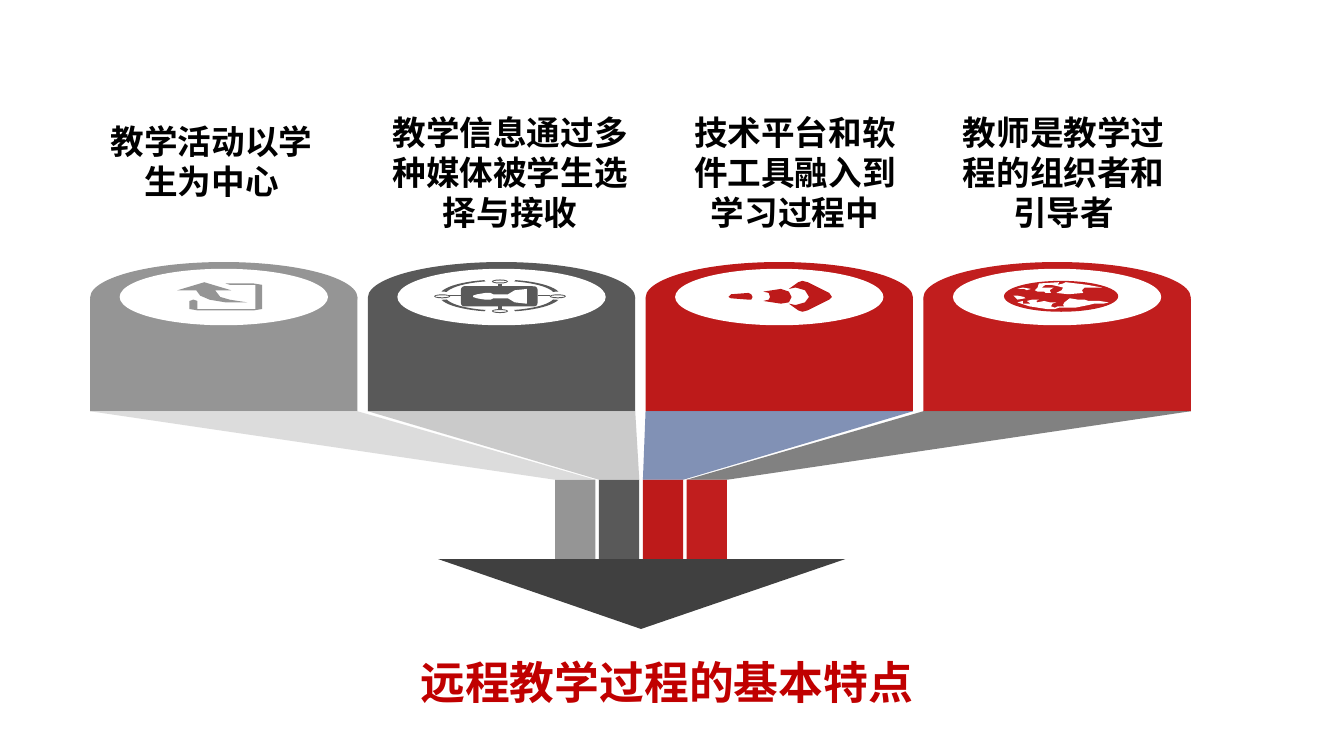
import math

import pptx
import pptx.dml.color
import pptx.enum.shapes
import pptx.enum.text
import pptx.oxml.ns
import pptx.util
from lxml import etree

Inches, Pt = pptx.util.Inches, pptx.util.Pt
RGB = pptx.dml.color.RGBColor
SHAPE = pptx.enum.shapes.MSO_SHAPE
qn = pptx.oxml.ns.qn

WHITE = RGB(0xFF, 0xFF, 0xFF)
BLACK = RGB(0, 0, 0)
LIGHT = RGB(0x95, 0x95, 0x95)
DARK = RGB(0x59, 0x59, 0x59)
RED = RGB(0xBD, 0x1A, 0x1A)
BRIGHT_RED = RGB(0xC1, 0x1E, 0x1E)
TITLE_RED = RGB(0xC0, 0, 0)
ARROW = RGB(0x40, 0x40, 0x40)
FONT = "Noto Sans CJK SC"

# Columns: cylinder colour, funnel colour, label, label box
COLUMNS = [
    (LIGHT, RGB(0xD5, 0xD5, 0xD5), "教学活动以学生为中心", (0.71, 0.85, 1.73, 0.71)),
    (DARK, RGB(0xBF, 0xBF, 0xBF), "教学信息通过多种媒体被学生选择与接收", (2.8, 0.78, 1.99, 1.01)),
    (RED, RGB(0x66, 0x79, 0xA5), "技术平台和软件工具融入到学习过程中", (5, 0.78, 1.83, 1.01)),
    (BRIGHT_RED, RGB(0x66, 0x66, 0x66), "教师是教学过程的组织者和引导者", (7.05, 0.78, 1.73, 1.01)),
]
WIDTH, STEM = 1.99, 0.3

# Icon outlines, in inches on the slide
FRAME = [(1.95, 2.12), (1.95, 2.3), (1.89, 2.31), (1.47, 2.31), (1.41, 2.3), (1.41, 2.24),
         (1.44, 2.23), (1.47, 2.24), (1.47, 2.3), (1.9, 2.3), (1.9, 2.12), (1.71, 2.12),
         (1.68, 2.11), (1.71, 2.11), (1.89, 2.11)]
SHARE = [(1.72, 2.16), (1.52, 2.1), (1.32, 2.16), (1.46, 2.16), (1.49, 2.2), (1.56, 2.23),
         (1.68, 2.25), (1.84, 2.25), (1.71, 2.23), (1.64, 2.21), (1.6, 2.16)]
PERSON_TOP = [(3.92, 2.15), (3.83, 2.16), (3.78, 2.19), (3.67, 2.19), (3.65, 2.18),
              (3.61, 2.18), (3.55, 2.19), (3.52, 2.2)]
PERSON = PERSON_TOP + [(x, 4.41 - y) for x, y in reversed(PERSON_TOP)]
BEACON = [
    [(5.94, 2.1), (5.87, 2.15), (5.92, 2.14), (5.99, 2.16), (6.02, 2.21), (5.99, 2.25),
     (5.92, 2.27), (5.87, 2.26), (5.94, 2.31), (5.97, 2.32), (6.01, 2.31), (6.17, 2.23),
     (6.19, 2.21), (6.17, 2.18), (6.01, 2.1), (5.97, 2.09)],
    [(5.6, 2.21), (5.59, 2.19), (5.57, 2.18), (5.44, 2.19), (5.42, 2.21), (5.44, 2.22),
     (5.57, 2.23), (5.59, 2.23)],
    [(5.89, 2.21), (5.87, 2.17), (5.81, 2.15), (5.68, 2.17), (5.72, 2.18), (5.73, 2.21),
     (5.72, 2.23), (5.68, 2.24), (5.81, 2.26), (5.87, 2.25)],
]
LANDS = [
    [(7.64, 2.16), (7.62, 2.15), (7.57, 2.15), (7.61, 2.14), (7.67, 2.15)],
    [(7.57, 2.2), (7.62, 2.21), (7.63, 2.22), (7.57, 2.23), (7.56, 2.22), (7.54, 2.2)],
    [(8.02, 2.23), (8.07, 2.23), (8.1, 2.24), (8.18, 2.24), (8.25, 2.25), (8.21, 2.26),
     (8.14, 2.26), (8.1, 2.27), (8.05, 2.28), (8, 2.29), (7.95, 2.29), (7.88, 2.29),
     (7.85, 2.3), (7.79, 2.3), (7.66, 2.28), (7.57, 2.25), (7.61, 2.24), (7.61, 2.26),
     (7.67, 2.26), (7.64, 2.24), (7.68, 2.23), (7.73, 2.23), (7.71, 2.24), (7.72, 2.25),
     (7.77, 2.24), (7.81, 2.25), (7.86, 2.25), (7.83, 2.26), (7.82, 2.28), (7.85, 2.29),
     (7.87, 2.28), (7.92, 2.28), (7.91, 2.27), (7.92, 2.25), (7.96, 2.22)],
    [(7.91, 2.11), (7.93, 2.1), (8.09, 2.12), (8.2, 2.14), (8.15, 2.14), (8.07, 2.14),
     (8.05, 2.16), (8.06, 2.18), (7.95, 2.19), (7.86, 2.18), (7.9, 2.16), (7.91, 2.14),
     (7.87, 2.13), (7.82, 2.12), (7.78, 2.12), (7.75, 2.14), (7.84, 2.14), (7.81, 2.16),
     (7.82, 2.18), (7.78, 2.18), (7.77, 2.17), (7.72, 2.17), (7.7, 2.16), (7.72, 2.14),
     (7.73, 2.11), (7.88, 2.1), (7.87, 2.12)],
]


def write(tf, text, size=18, color=BLACK, bold=True, align=pptx.enum.text.PP_ALIGN.CENTER):
    p = tf.paragraphs[0]
    p.alignment, p.space_after, p.line_spacing = align, Pt(6), Pt(size * 1.2)
    r = p.add_run()
    r.text = text
    r.font.size, r.font.bold, r.font.name = Pt(size), bold, FONT
    r.font.color.rgb = color
    etree.SubElement(r.font._element, qn("a:ea")).set("typeface", FONT)


class Painter:
    def __init__(self, s):
        self.s = s

    def paint(self, sp, color, alpha=None):
        sp.shadow.inherit = False
        sp.fill.solid()
        sp.fill.fore_color.rgb = color
        sp.line.fill.background()
        if alpha:
            clr = sp._element.spPr.find(".//" + qn("a:srgbClr"))
            etree.SubElement(clr, qn("a:alpha")).set("val", str(alpha * 1000))

    def shape(self, kind, x, y, w, h, color):
        sp = self.s.shapes.add_shape(kind, Inches(x), Inches(y), Inches(w), Inches(h))
        self.paint(sp, color)

    def outline(self, contours, color, alpha=None):
        paths = [[(Inches(x), Inches(y)) for x, y in c] for c in contours]
        fb = self.s.shapes.build_freeform(*paths[0][0])
        fb.add_line_segments(paths[0][1:], close=True)
        for path in paths[1:]:
            fb.move_to(*path[0])
            fb.add_line_segments(path[1:], close=True)
        self.paint(fb.convert_to_shape(), color, alpha)

    def line(self, x1, y1, x2, y2, color, width):
        c = self.s.shapes.add_connector(pptx.enum.shapes.MSO_CONNECTOR.STRAIGHT,
                                        Inches(x1), Inches(y1), Inches(x2), Inches(y2))
        c.line.color.rgb, c.line.width = color, Pt(width)
        etree.SubElement(c._element.spPr, qn("a:effectLst"))

    def text(self, box, text, **fmt):
        tf = self.s.shapes.add_textbox(*map(Inches, box)).text_frame
        tf.word_wrap = True
        tf.auto_size = pptx.enum.text.MSO_AUTO_SIZE.SHAPE_TO_FIT_TEXT
        write(tf, text, **fmt)


def ring_part(start):
    """A 60 degree piece of the flat ring around the network icon."""
    angles = [math.radians(start + a) for a in range(0, 61, 6)]
    outer = [(3.72 + 0.45 * math.cos(a), 2.2 + 0.12 * math.sin(a)) for a in angles]
    inner = [(3.72 + 0.41 * math.cos(a), 2.2 + 0.11 * math.sin(a)) for a in angles]
    return outer + inner[::-1]


def main():
    prs = pptx.Presentation()
    prs.slide_width = Inches(10)
    prs.slide_height = prs.slide_width * 9 // 16
    d = Painter(prs.slides.add_slide(prs.slide_layouts[6]))

    # Cylinders, funnels and stems
    for i, (color, funnel, label, box) in enumerate(COLUMNS):
        x, stem = 0.67 + 6.2 / 3 * i, 4.13 + 0.98 / 3 * i
        d.shape(SHAPE.RECTANGLE, x, 2.22, WIDTH, 0.84, color)
        d.shape(SHAPE.RECTANGLE, stem, 3.57, STEM, 0.64, color)
        d.outline([[(x, 3.06), (x + WIDTH, 3.06), (stem + STEM, 3.57), (stem, 3.57)]], funnel, 82)
        d.shape(SHAPE.OVAL, x, 1.95, WIDTH, 0.53, color)
        d.shape(SHAPE.OVAL, x + 0.22, 2, 1.55, 0.42, WHITE)

    # Arrow
    d.outline([[(3.26, 4.16), (6.29, 4.16), (4.77, 4.68)]], ARROW)

    # Share icon
    d.outline([FRAME], LIGHT)
    d.outline([SHARE], LIGHT)

    # Network icon
    d.outline([ring_part(a) for a in (15, 105, 195, 285)], DARK)
    d.shape(SHAPE.ROUNDED_RECTANGLE, 3.43, 2.13, 0.57, 0.15, DARK)
    d.outline([PERSON], WHITE)
    for x, y in [(3.66, 2.08), (3.66, 2.3), (3.23, 2.19), (4.09, 2.19)]:
        d.shape(SHAPE.DONUT, x, y, 0.12, 0.03, DARK)
    for x in (3.34, 4):
        d.line(x, 2.2, x + 0.09, 2.2, DARK, 0.75)
    for y in (2.11, 2.28):
        d.line(3.72, y, 3.72, y + 0.02, DARK, 2)

    # Beacon and globe icons
    d.outline(BEACON, RED)
    d.shape(SHAPE.OVAL, 7.47, 2.09, 0.85, 0.23, BRIGHT_RED)
    d.outline(LANDS, WHITE)

    # Labels and title
    d.text((1.22, 4.82, 7.48, 0.51), "远程教学过程的基本特点", size=24, color=TITLE_RED)
    for color, funnel, label, box in COLUMNS:
        d.text(box, label)

    prs.save("out.pptx")


if __name__ == "__main__":
    main()
